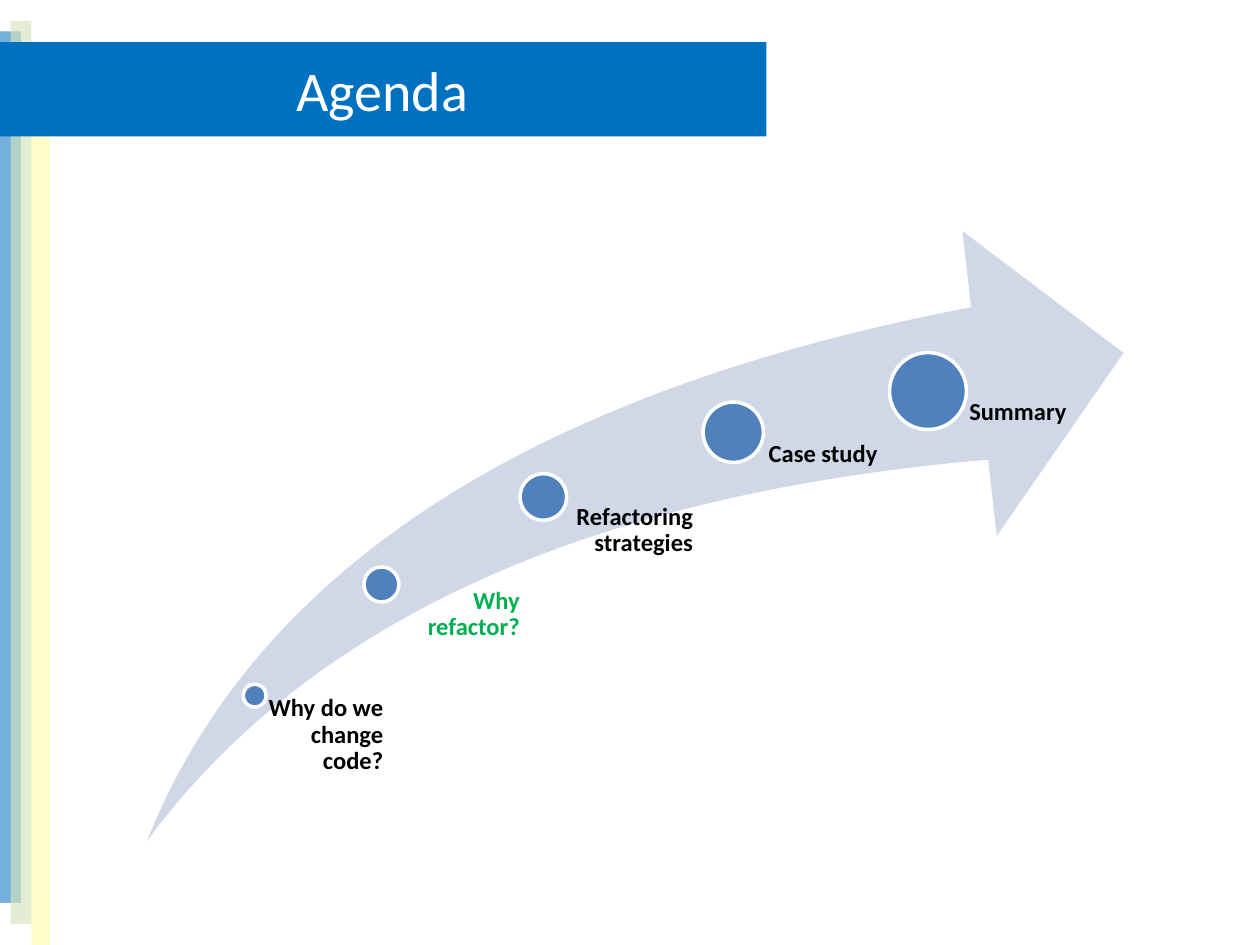
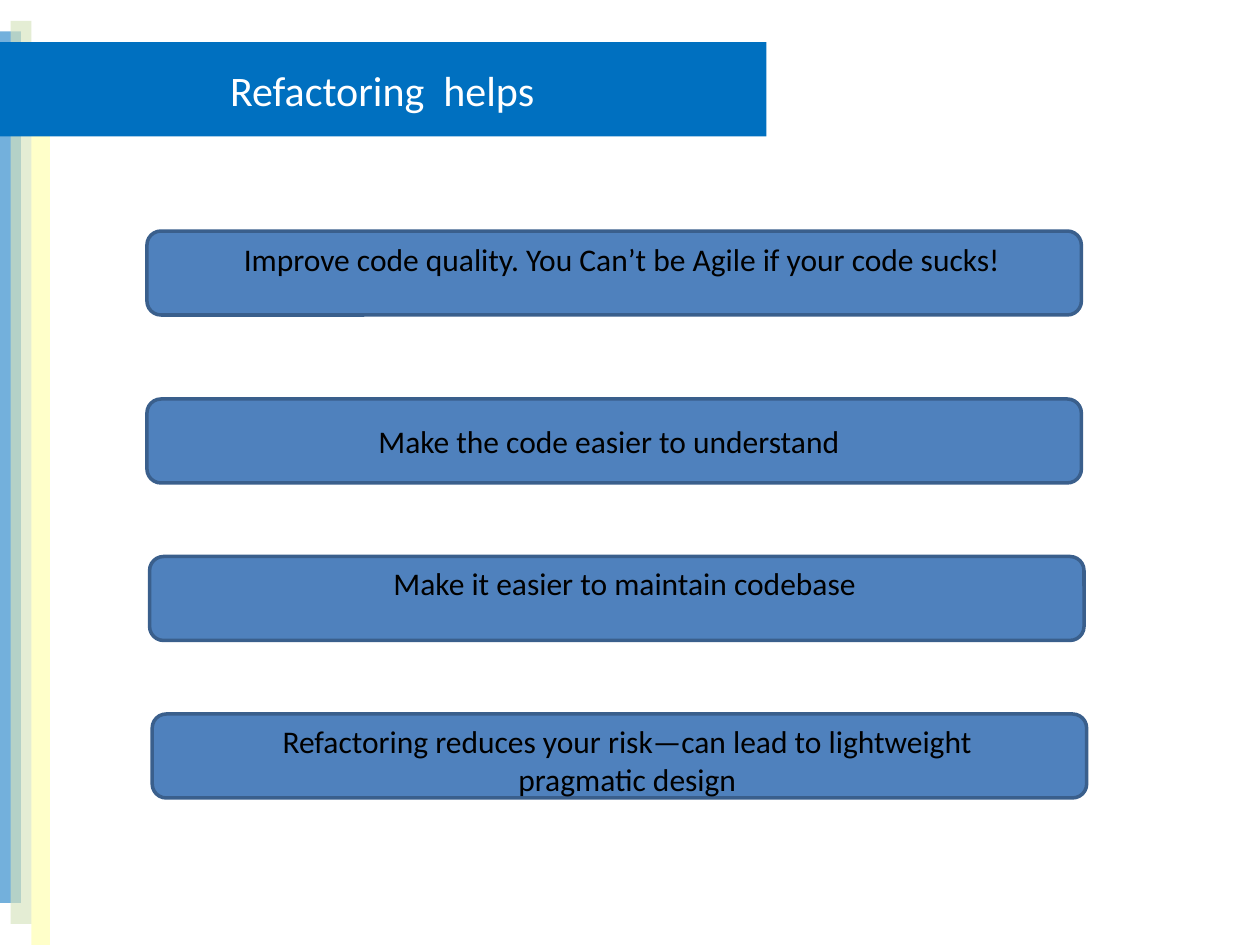
from dataclasses import dataclass

from lxml import etree
from pptx import Presentation
from pptx.dml.color import RGBColor
from pptx.enum import shapes, text
from pptx.oxml import ns
from pptx.util import Pt

AGENDA_TITLE = "Agenda"
AGENDA = [
    {"label": "Why do we change code?", "circle": (145.5, 397.5, 13), "at": (145.5, 397.5, 73.5)},
    {"label": "Why\vrefactor?", "circle": (218, 334, 20), "at": (204, 336, 93), "current": True},
    {"label": "Refactoring strategies", "circle": (310.5, 284, 26.6), "at": (288, 288, 108)},
    {"label": "Case study", "circle": (419, 247, 34.5), "at": (390, 252, 111.5)},
    {"label": "Summary", "circle": (530.3, 223.5, 44), "at": (498, 228, 111.5)},
]
HELPS_TITLE = "Refactoring  helps"
HELPS = [
    {"lines": ["Improve code quality. You Can’t be Agile if your code sucks!"],
     "at": (84, 132), "offset": (1.5, 1.5)},
    {"lines": ["Make the code easier to understand"],
     "at": (84, 228), "offset": (-6, 9.5)},
    {"lines": ["Make it easier to maintain codebase"],
     "at": (85.5, 318), "offset": (1.5, 1)},
    {"lines": ["Refactoring reduces your risk—can lead to lightweight", "pragmatic design"],
     "at": (87, 408), "offset": (1.5, 1)},
]


@dataclass(frozen=True)
class Theme:
    font: str = "Calibri"
    blue: str = "0070C0"
    green_band: str = "D7E4BD"
    yellow_band: str = "FFFF00"
    swoosh: str = "D0D8E8"
    accent: str = "4F81BD"
    border: str = "3A5F8C"
    white: str = "FFFFFF"
    black: str = "000000"
    current: str = "00B050"
    title: int = 32
    small_title: int = 24
    label: int = 14
    body: int = 18


T = Theme()
BANDS = [
    ((0, 18, 12, 498), T.blue, 55),
    ((6, 12, 12, 516), T.green_band, 65),
    ((18, 24, 10.6, 516), T.yellow_band, 21),
]
TITLE_BOX = (-1.2, 24, 439.2, 54)
SWOOSH_BOX = (84, 132, 558, 348.5)
LABEL_BOTTOM = 482
BAR_SIZE = (534, 48)
LINE_HEIGHT = 22


def points(*values):
    return [Pt(v) for v in values]


def write(tf, lines, size, color, bold=False, align=text.PP_ALIGN.CENTER, spacing=None):
    tf.word_wrap = True
    for i, line in enumerate(lines):
        p = tf.paragraphs[0] if i == 0 else tf.add_paragraph()
        p.text = line
        p.alignment = align
        p.line_spacing = spacing
        f = p.font
        f.name, f.size, f.bold = T.font, Pt(size), bold
        f.color.rgb = RGBColor.from_string(color)


def add_shape(slide, kind, box, fill, line=None, alpha=None):
    sp = slide.shapes.add_shape(kind, *points(*box))
    sp.shadow.inherit = False
    sp.fill.solid()
    sp.fill.fore_color.rgb = RGBColor.from_string(fill)
    if alpha:
        color = sp.element.spPr.find(ns.qn("a:solidFill"))[0]
        etree.SubElement(color, ns.qn("a:alpha"), val=str(alpha * 1000))
    if line:
        sp.line.color.rgb = RGBColor.from_string(line)
        sp.line.width = Pt(2)
    else:
        sp.line.fill.background()
    return sp


def add_bands(slide):
    tree = slide.slide_layout.shapes.element
    for i, (box, color, alpha) in enumerate(BANDS):
        sp = add_shape(slide, shapes.MSO_SHAPE.RECTANGLE, box, color, alpha=alpha)
        sp.element.nvSpPr.cNvPr.set("id", str(101 + i))
        tree.insert(2 + i, sp.element)


def add_slide(prs, layout, title, size):
    slide = prs.slides.add_slide(layout)
    sp = slide.shapes.title
    sp.left, sp.top, sp.width, sp.height = points(*TITLE_BOX)
    sp.fill.solid()
    sp.fill.fore_color.rgb = RGBColor.from_string(T.blue)
    tf = sp.text_frame
    tf.auto_size = text.MSO_AUTO_SIZE.NONE
    tf.vertical_anchor = text.MSO_ANCHOR.MIDDLE
    write(tf, [title], size, T.white)
    return slide


def add_agenda(slide):
    arrow = add_shape(slide, shapes.MSO_SHAPE.SWOOSH_ARROW, SWOOSH_BOX, T.swoosh)
    arrow.adjustments[0] = arrow.adjustments[1] = 0.25
    for item in AGENDA:
        x, y, d = item["circle"]
        add_shape(slide, shapes.MSO_SHAPE.OVAL, (x - d / 2, y - d / 2, d, d), T.accent, T.white)
        left, top, width = item["at"]
        tf = slide.shapes.add_textbox(*points(left, top, width, LABEL_BOTTOM - top)).text_frame
        tf.margin_left = Pt(d / 2)
        tf.margin_top = tf.margin_right = tf.margin_bottom = 0
        color = T.current if item.get("current") else T.black
        write(tf, [item["label"]], T.label, color, bold=True,
              align=text.PP_ALIGN.RIGHT, spacing=0.9)


def add_helps(slide):
    width, height = BAR_SIZE
    for item in HELPS:
        (x, y), (dx, dy) = item["at"], item["offset"]
        add_shape(slide, shapes.MSO_SHAPE.ROUNDED_RECTANGLE, (x, y, width, height),
                  T.accent, T.border)
        box = (x + dx, y + dy, width + 6, 7 + LINE_HEIGHT * len(item["lines"]))
        tf = slide.shapes.add_textbox(*points(*box)).text_frame
        tf.auto_size = text.MSO_AUTO_SIZE.SHAPE_TO_FIT_TEXT
        write(tf, item["lines"], T.body, T.black)


def main():
    prs = Presentation()
    prs.slide_width, prs.slide_height = points(720, 540)
    layout = prs.slide_layouts.get_by_name("Title Only")
    agenda = add_slide(prs, layout, AGENDA_TITLE, T.title)
    add_bands(agenda)
    add_agenda(agenda)
    add_helps(add_slide(prs, layout, HELPS_TITLE, T.small_title))
    prs.save("out.pptx")


if __name__ == "__main__":
    main()
